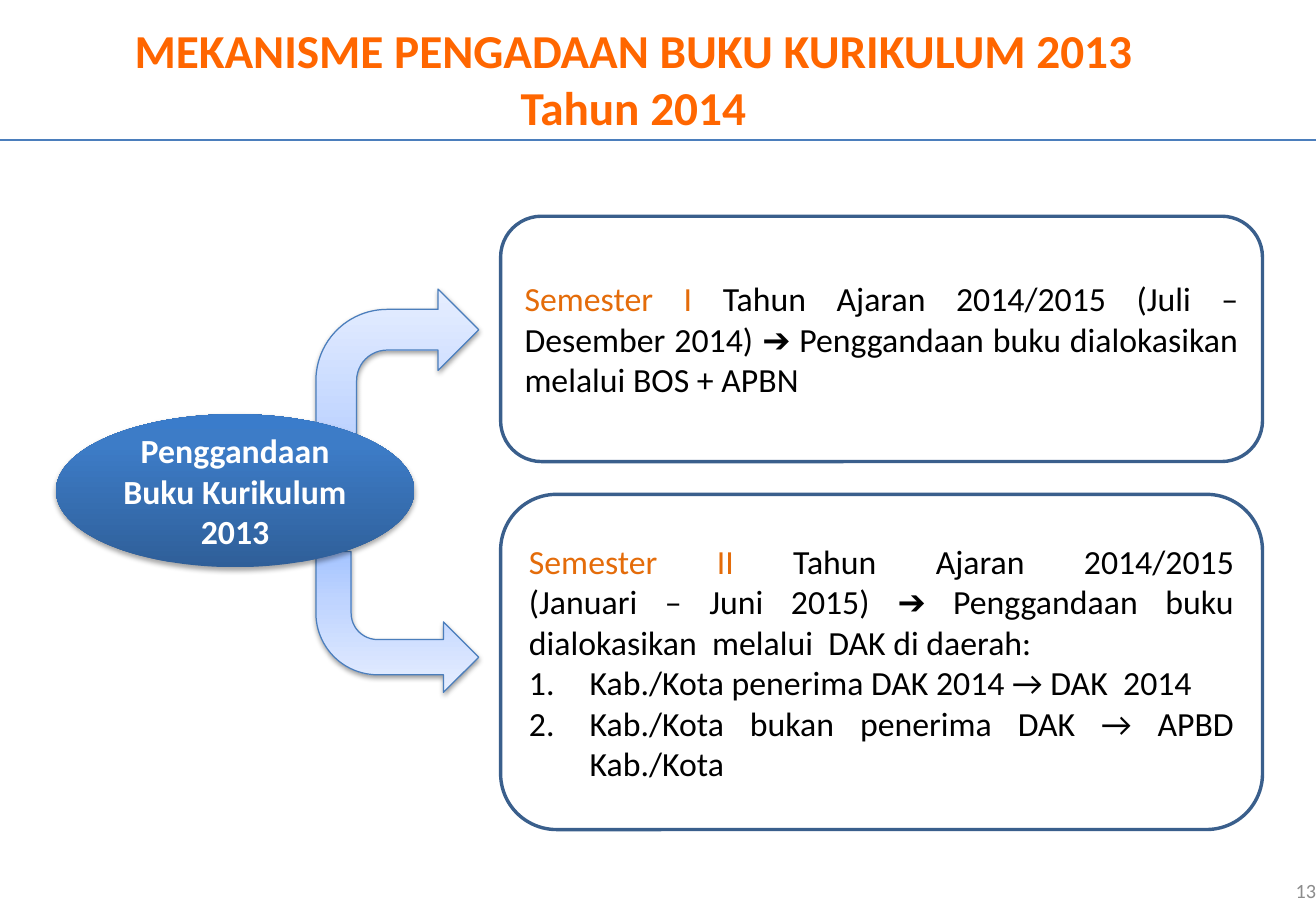
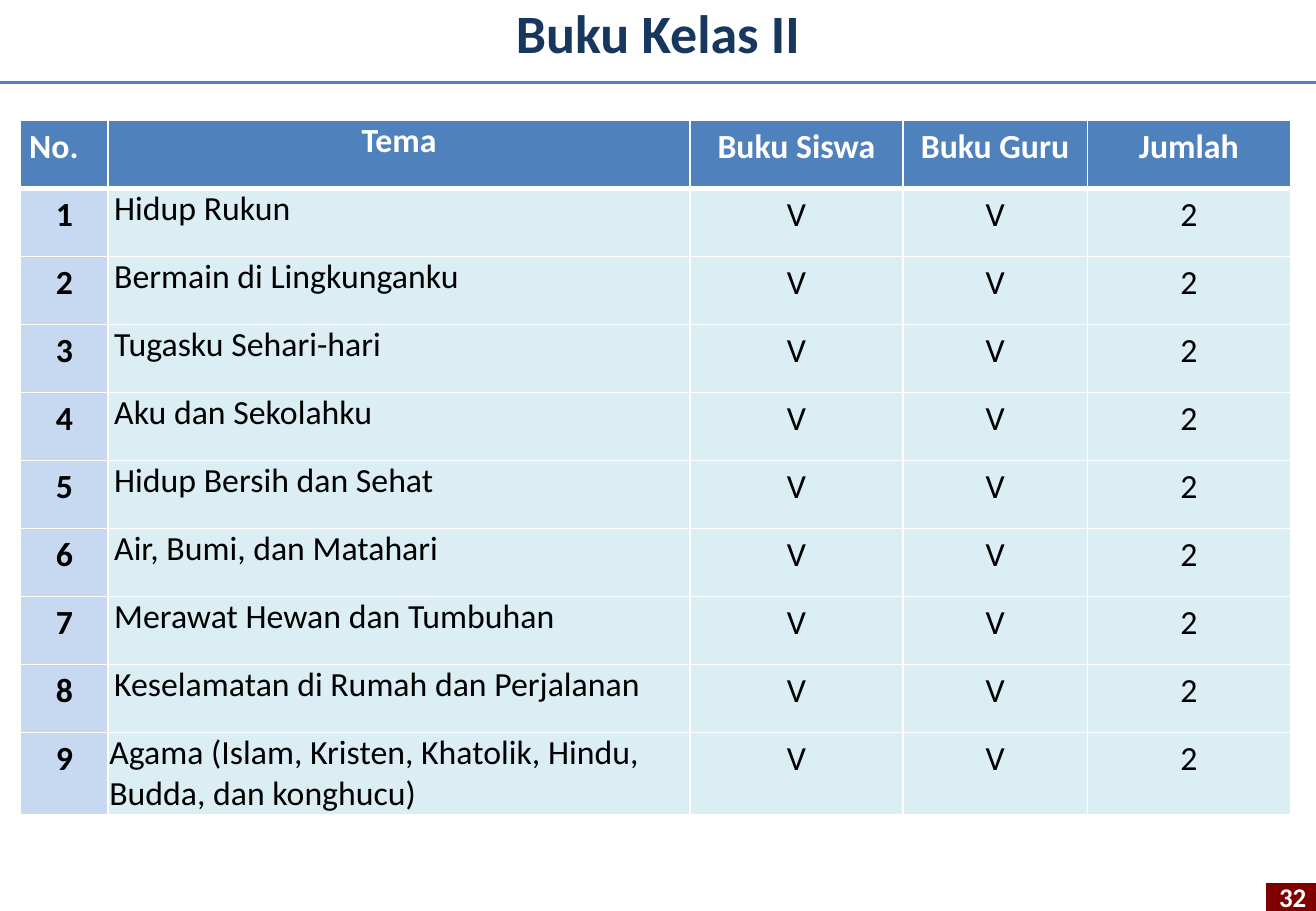
import pptx
import pptx.util
import pptx.dml.color
import pptx.enum.shapes
import pptx.enum.text
import pptx.oxml
import pptx.oxml.ns

Inches, Pt = pptx.util.Inches, pptx.util.Pt
RGBColor = pptx.dml.color.RGBColor
SHAPE = pptx.enum.shapes.MSO_SHAPE
ALIGN = pptx.enum.text.PP_ALIGN
ANCHOR = pptx.enum.text.MSO_ANCHOR
qn = pptx.oxml.ns.qn
NS = pptx.oxml.ns.nsdecls("a")

FONT = "Calibri"
WIDTH, HEIGHT = 10.83, 7.5
WHITE = RGBColor(0xFF, 0xFF, 0xFF)
BLACK = RGBColor(0, 0, 0)
ORANGE = RGBColor(0xFF, 0x66, 0x00)
SEMESTER_ORANGE = RGBColor(0xE4, 0x6C, 0x0A)
NAVY = RGBColor(0x17, 0x37, 0x5E)
GREY = RGBColor(0x8C, 0x8C, 0x8C)
MAROON = RGBColor(0x80, 0, 0)
LINE_BLUE = RGBColor(0x4B, 0x7E, 0xBC)
BOX_BLUE = RGBColor(0x3A, 0x5F, 0x8C)
HEADER_BLUE = RGBColor(0x4F, 0x81, 0xBD)
NUMBER_BLUE = RGBColor(0xC6, 0xD9, 0xF1)
BODY_BLUE = RGBColor(0xDB, 0xEE, 0xF4)
ARROW_STOPS = [(0, RGBColor(0xA4, 0xC4, 0xFF)), (35, RGBColor(0xBF, 0xD4, 0xFF)),
               (100, RGBColor(0xE6, 0xEE, 0xFF))]
OVAL_STOPS = [(0, RGBColor(0x2F, 0x5F, 0x99)), (80, RGBColor(0x3D, 0x7C, 0xC7)),
              (100, RGBColor(0x3A, 0x7C, 0xCB))]


def write(frame, text, size=20, color=BLACK, bold=False, align=ALIGN.LEFT,
          spacing=None, numbered=False):
    """Add a paragraph; text is a string or a list of (text, color) runs."""
    paragraph = frame.paragraphs[0]
    if paragraph.runs:
        paragraph = frame.add_paragraph()
    paragraph.alignment = align
    if spacing:
        paragraph.line_spacing = spacing
    if numbered:
        properties = paragraph._p.get_or_add_pPr()
        properties.set("marL", str(Inches(0.5)))
        properties.set("indent", str(-Inches(0.5)))
        properties.append(pptx.oxml.parse_xml(f'<a:buAutoNum {NS} type="arabicPeriod"/>'))
    runs = [(text, color)] if isinstance(text, str) else text
    for words, run_color in runs:
        for index, line in enumerate(words.split("\n")):
            if index:
                paragraph.add_line_break()
            run = paragraph.add_run()
            run.text = line
            run.font.name, run.font.size, run.font.bold = FONT, Pt(size), bold
            run.font.color.rgb = run_color


class Deck:
    def __init__(self):
        self.presentation = pptx.Presentation()
        self.presentation.slide_width = Inches(WIDTH)
        self.presentation.slide_height = Inches(HEIGHT)
        self.slide = None

    def new_slide(self):
        self.slide = self.presentation.slides.add_slide(self.presentation.slide_layouts[6])

    def text(self, box, text, **style):
        label = self.slide.shapes.add_textbox(*map(Inches, box))
        label.text_frame.word_wrap = True
        label.text_frame.vertical_anchor = ANCHOR.MIDDLE
        write(label.text_frame, text, **style)

    def shape(self, kind, box, fill=None, line=None, weight=1.0, shadow=None):
        """fill is a color or a list of gradient stops; shadow is (opacity, distance)."""
        shape = self.slide.shapes.add_shape(kind, *map(Inches, box))
        shape.text_frame.word_wrap = True
        shape.text_frame.vertical_anchor = ANCHOR.MIDDLE
        properties = shape.element.spPr
        if fill is None:
            shape.fill.background()
        elif isinstance(fill, list):
            shape.fill.gradient()
            shape.fill.gradient_angle = 90
            stops = properties.find(qn("a:gradFill")).find(qn("a:gsLst"))
            for stop in list(stops):
                stops.remove(stop)
            for position, color in fill:
                stops.append(pptx.oxml.parse_xml(
                    f'<a:gs {NS} pos="{position * 1000}"><a:srgbClr val="{color}"/></a:gs>'))
        else:
            shape.fill.solid()
            shape.fill.fore_color.rgb = fill
        if line is None:
            shape.line.fill.background()
        else:
            shape.line.color.rgb = line
            shape.line.width = Pt(weight)
        shape.shadow.inherit = False
        if shadow:
            opacity, distance = shadow
            properties.find(qn("a:effectLst")).append(pptx.oxml.parse_xml(
                f'<a:outerShdw {NS} blurRad="{Pt(3.1)}" dist="{Pt(distance)}" dir="5400000" '
                f'rotWithShape="0"><a:srgbClr val="000000"><a:alpha val="{opacity * 1000}"/>'
                f'</a:srgbClr></a:outerShdw>'))
        return shape

    def rule(self, top, color, weight):
        rule = self.slide.shapes.add_connector(
            pptx.enum.shapes.MSO_CONNECTOR.STRAIGHT,
            0, Inches(top), Inches(WIDTH), Inches(top))
        rule.line.color.rgb = color
        rule.line.width = Pt(weight)
        rule.element.spPr.append(pptx.oxml.parse_xml(f"<a:effectLst {NS}/>"))

    def table(self, left, top, widths, heights):
        table = self.slide.shapes.add_table(
            len(heights), len(widths), Inches(left), Inches(top),
            Inches(sum(widths)), Inches(sum(heights))).table
        for column, width in zip(table.columns, widths):
            column.width = Inches(width)
        for row, height in zip(table.rows, heights):
            row.height = Inches(height)
        return table

    def cell(self, cell, text, fill, side=0.07, top_line=1, bottom_line=1, **style):
        cell.margin_left = cell.margin_right = Inches(side)
        cell.margin_top = cell.margin_bottom = 0
        properties = cell._tc.get_or_add_tcPr()
        for edge, weight in zip("LRTB", (1, 1, top_line, bottom_line)):
            properties.append(pptx.oxml.parse_xml(
                f'<a:ln{edge} {NS} w="{Pt(weight)}"><a:solidFill>'
                f'<a:srgbClr val="{WHITE}"/></a:solidFill></a:ln{edge}>'))
        cell.fill.solid()
        cell.fill.fore_color.rgb = fill
        write(cell.text_frame, text, **style)


def mechanism_slide(deck):
    deck.new_slide()
    deck.text((0.22, 0.21, 10.07, 0.87),
              "MEKANISME PENGADAAN BUKU KURIKULUM 2013 \nTahun 2014 ",
              size=28, color=ORANGE, bold=True, align=ALIGN.CENTER)
    deck.rule(1.15, LINE_BLUE, 1)
    deck.text((8.4, 7.13, 2.53, 0.4), "13", size=12, color=GREY, align=ALIGN.RIGHT)

    # Arrows from the oval to both semesters
    lower_arrow, _ = [
        deck.shape(SHAPE.BENT_ARROW, (2.6, top, 1.34, height), ARROW_STOPS,
                   LINE_BLUE, 0.75, shadow=(38, 1.6))
        for top, height in ((4.54, 1.16), (2.38, 1.8))]
    lower_arrow.rotation = 180
    lower_arrow.element.spPr.find(qn("a:xfrm")).set("flipH", "1")

    copying = deck.shape(SHAPE.OVAL, (0.46, 3.41, 2.95, 1.26), OVAL_STOPS, shadow=(35, 1.8))
    write(copying.text_frame, "Penggandaan Buku Kurikulum 2013",
          color=WHITE, bold=True, align=ALIGN.CENTER)

    # Semester boxes: heading, sentence, numbered points
    semesters = [
        (1.78, 2.02, "Semester I ",
         "Tahun Ajaran 2014/2015 (Juli – Desember 2014) ➔ Penggandaan buku "
         "dialokasikan melalui BOS + APBN", []),
        (4.07, 2.76, "Semester II ",
         "Tahun Ajaran 2014/2015\n(Januari – Juni 2015) ➔ Penggandaan buku "
         "dialokasikan  melalui  DAK di daerah: ",
         ["Kab./Kota penerima DAK 2014 → DAK  2014",
          "Kab./Kota bukan penerima DAK → APBD Kab./Kota "]),
    ]
    for top, height, heading, sentence, points in semesters:
        semester = deck.shape(SHAPE.ROUNDED_RECTANGLE, (4.12, top, 6.27, height),
                              line=BOX_BLUE, weight=2)
        write(semester.text_frame, [(heading, SEMESTER_ORANGE), (sentence, BLACK)],
              align=ALIGN.JUSTIFY)
        for point in points:
            write(semester.text_frame, point, align=ALIGN.JUSTIFY, numbered=True)


def books_slide(deck):
    deck.new_slide()
    page = deck.shape(SHAPE.RECTANGLE, (10.42, 7.27, 0.43, 0.23), MAROON)
    write(page.text_frame, "32", size=16, color=WHITE, bold=True, align=ALIGN.RIGHT)
    deck.text((0, -0.07, WIDTH, 0.67), "Buku Kelas II",
              size=32, color=NAVY, bold=True, align=ALIGN.CENTER)

    # Table of themes
    headings = ["No.", "Tema", "Buku Siswa", "Buku Guru", "Jumlah"]
    themes = ["Hidup Rukun", "Bermain di Lingkunganku", "Tugasku Sehari-hari",
              "Aku dan Sekolahku", "Hidup Bersih dan Sehat", "Air, Bumi, dan Matahari",
              "Merawat Hewan dan Tumbuhan", "Keselamatan di Rumah dan Perjalanan",
              "Agama (Islam, Kristen, Khatolik, Hindu, Budda, dan konghucu)"]
    books = deck.table(0.17, 0.99, [0.72, 4.79, 1.75, 1.52, 1.67],
                       [0.56] * len(themes) + [0.68])
    for column, heading in enumerate(headings):
        deck.cell(books.cell(0, column), heading, HEADER_BLUE, bottom_line=3,
                  color=WHITE, bold=True, spacing=None if column == 1 else 1.15,
                  align=ALIGN.LEFT if column == 0 else ALIGN.CENTER)
    for number, theme in enumerate(themes, 1):
        top_line = 3 if number == 1 else 1
        is_last = number == len(themes)
        for column, value in enumerate([str(number), theme, "V", "V", "2"]):
            cell = books.cell(number, column)
            if column == 1:
                deck.cell(cell, value, BODY_BLUE, side=0.01 if is_last else 0.05,
                          top_line=top_line)
                if is_last:
                    cell.vertical_anchor = ANCHOR.BOTTOM
            else:
                deck.cell(cell, value, BODY_BLUE if column else NUMBER_BLUE,
                          top_line=top_line, bold=column == 0,
                          align=ALIGN.CENTER, spacing=1.15)
    deck.rule(0.68, HEADER_BLUE, 2.25)


def main():
    deck = Deck()
    mechanism_slide(deck)
    books_slide(deck)
    deck.presentation.save("out.pptx")


if __name__ == "__main__":
    main()
